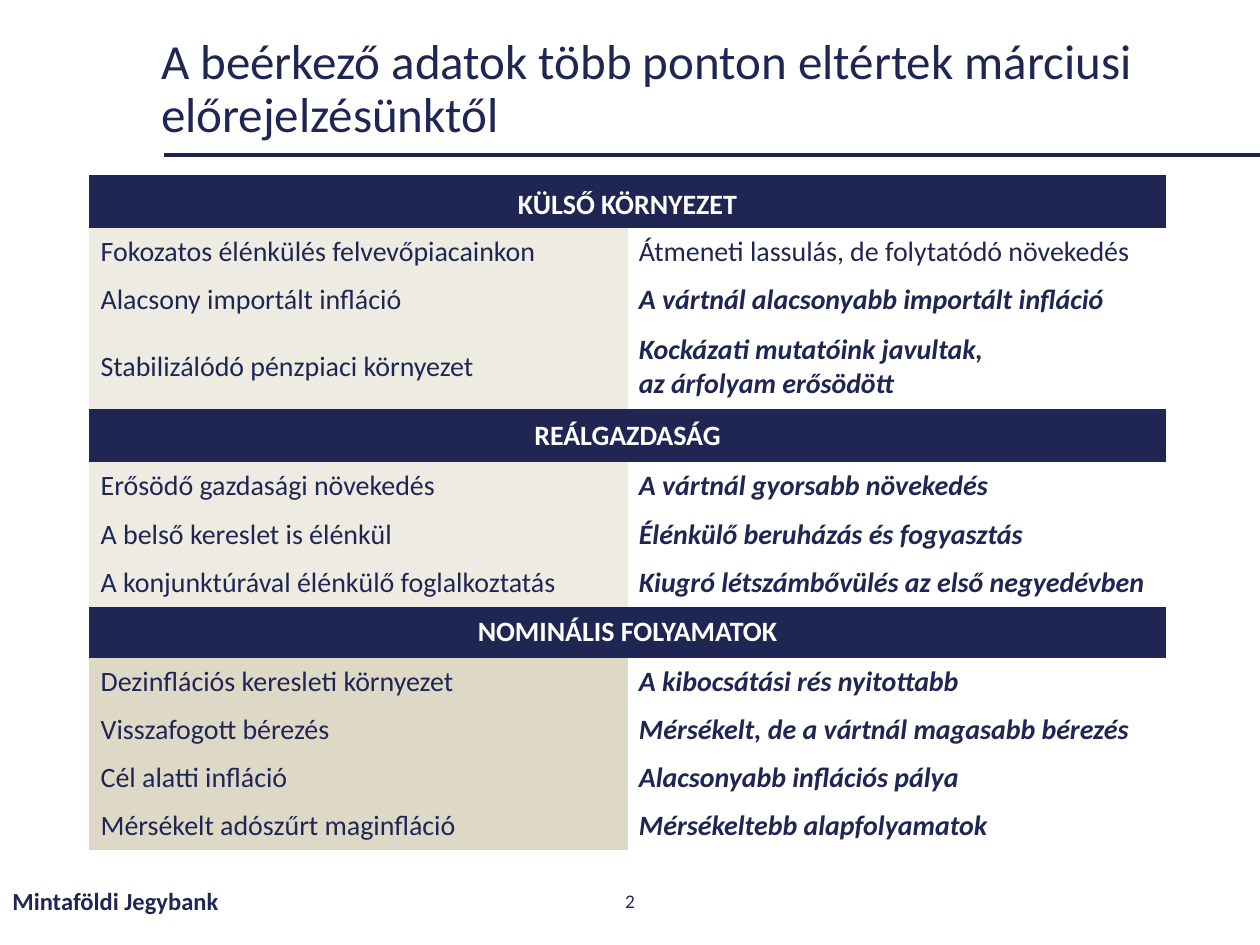
"""Builds a slide that sets the March forecast against the incoming data."""
from dataclasses import dataclass

from lxml import etree
from pptx import Presentation
from pptx.dml.color import RGBColor
from pptx.enum.shapes import MSO_CONNECTOR
from pptx.enum.text import MSO_ANCHOR, PP_ALIGN
from pptx.oxml.ns import qn
from pptx.util import Cm, Pt

STRAIGHT = MSO_CONNECTOR.STRAIGHT
MIDDLE, BOTTOM = MSO_ANCHOR.MIDDLE, MSO_ANCHOR.BOTTOM
LEFT, CENTER = PP_ALIGN.LEFT, PP_ALIGN.CENTER
PLAIN_TABLE = "{2D5ABB26-0587-4C30-8999-92F81FD0307C}"


@dataclass(frozen=True)
class Theme:
    font: str = "Calibri"
    navy: str = "202653"
    rule: str = "1E2452"
    white: str = "FFFFFF"
    light: str = "EEECE2"
    sand: str = "DED9C6"
    title_size: int = 28
    table_size: int = 16
    footer_size: int = 14
    number_size: int = 11


THEME = Theme()
ROW, TALL_ROW = 0.97, 1.7
SECTIONS = [
    ("KÜLSŐ KÖRNYEZET", 1.07, BOTTOM, THEME.light, [
        ("Fokozatos élénkülés felvevőpiacainkon", "Átmeneti lassulás, de folytatódó növekedés", False),
        ("Alacsony importált infláció", "A vártnál alacsonyabb importált infláció", True),
        ("Stabilizálódó pénzpiaci környezet", "Kockázati mutatóink javultak,\naz árfolyam erősödött", True),
    ]),
    ("REÁLGAZDASÁG", 1.08, MIDDLE, THEME.light, [
        ("Erősödő gazdasági növekedés", "A vártnál gyorsabb növekedés", True),
        ("A belső kereslet is élénkül", "Élénkülő beruházás és fogyasztás", True),
        ("A konjunktúrával élénkülő foglalkoztatás", "Kiugró létszámbővülés az első negyedévben", True),
    ]),
    ("NOMINÁLIS FOLYAMATOK", 1.03, MIDDLE, THEME.sand, [
        ("Dezinflációs keresleti környezet", "A kibocsátási rés nyitottabb", True),
        ("Visszafogott bérezés", "Mérsékelt, de a vártnál magasabb bérezés", True),
        ("Cél alatti infláció", "Alacsonyabb inflációs pálya", True),
        ("Mérsékelt adószűrt maginfláció", "Mérsékeltebb alapfolyamatok", True),
    ]),
]


class SlideBuilder:
    def __init__(self, page, theme):
        self.page = page
        self.theme = theme

    def fill_text(self, frame, text, size, color, align=LEFT, bold=False, italic=False, spacing=None):
        frame.text = text
        frame.word_wrap = True
        for para in frame.paragraphs:
            para.alignment = align
            para.line_spacing = spacing
            para.font.name = self.theme.font
            para.font.size = Pt(size)
            para.font.bold = bold
            para.font.italic = italic
            para.font.color.rgb = RGBColor.from_string(color)

    def text(self, text, left, top, width, height, size, **style):
        box = self.page.shapes.add_textbox(Cm(left), Cm(top), Cm(width), Cm(height))
        box.text_frame.vertical_anchor = MIDDLE
        self.fill_text(box.text_frame, text, size, self.theme.navy, **style)

    def rule(self, left, right, top, weight):
        line = self.page.shapes.add_connector(STRAIGHT, Cm(left), Cm(top), Cm(right), Cm(top))
        line.line.color.rgb = RGBColor.from_string(self.theme.rule)
        line.line.width = Pt(weight)
        etree.SubElement(line.element.spPr, qn("a:effectLst"))

    def cell(self, cell, text, color, fill=None, anchor=MIDDLE, **style):
        cell.margin_left = cell.margin_right = Cm(0.23)
        cell.margin_top = cell.margin_bottom = Cm(0.13)
        cell.vertical_anchor = anchor
        if fill:
            cell.fill.solid()
            cell.fill.fore_color.rgb = RGBColor.from_string(fill)
        else:
            cell.fill.background()
        self.fill_text(cell.text_frame, text, self.theme.table_size, color, **style)

    def comparison(self, sections, left, top, width):
        theme = self.theme
        count = sum(1 + len(rows) for *_, rows in sections)
        frame = self.page.shapes.add_table(count, 2, Cm(left), Cm(top), Cm(width), Cm(count * ROW))
        next(frame.element.iter(qn("a:tableStyleId"))).text = PLAIN_TABLE
        table = frame.table
        table.first_row = table.horz_banding = False
        for column in table.columns:
            column.width = Cm(width / 2)
        index = 0
        for heading, height, anchor, fill, rows in sections:
            table.rows[index].height = Cm(height)
            first = table.cell(index, 0)
            first.merge(table.cell(index, 1))
            self.cell(first, heading, theme.white, theme.navy, anchor, align=CENTER, bold=True)
            for index, (forecast, outcome, differs) in enumerate(rows, index + 1):
                table.rows[index].height = Cm(TALL_ROW if "\n" in outcome else ROW)
                self.cell(table.cell(index, 0), forecast, theme.navy, fill)
                self.cell(table.cell(index, 1), outcome, theme.navy, bold=differs, italic=differs)
            index += 1


def main():
    deck = Presentation()
    deck.slide_width, deck.slide_height = Cm(25.4), Cm(19.05)
    slide = SlideBuilder(deck.slides.add_slide(deck.slide_layouts[6]), THEME)
    slide.rule(3.3, 25.4, 3.12, 2.25)
    slide.text("A beérkező adatok több ponton eltértek márciusi előrejelzésünktől",
               3, 0.5, 21.9, 2.62, THEME.title_size, spacing=0.9)
    slide.text("Mintaföldi Jegybank", 0, 17.65, 8.6, 1.02, THEME.footer_size, bold=True)
    slide.text("2", 9.85, 17.65, 5.7, 1.02, THEME.number_size, align=CENTER)
    slide.comparison(SECTIONS, 1.8, 3.53, 21.7)
    deck.save("out.pptx")


if __name__ == "__main__":
    main()
